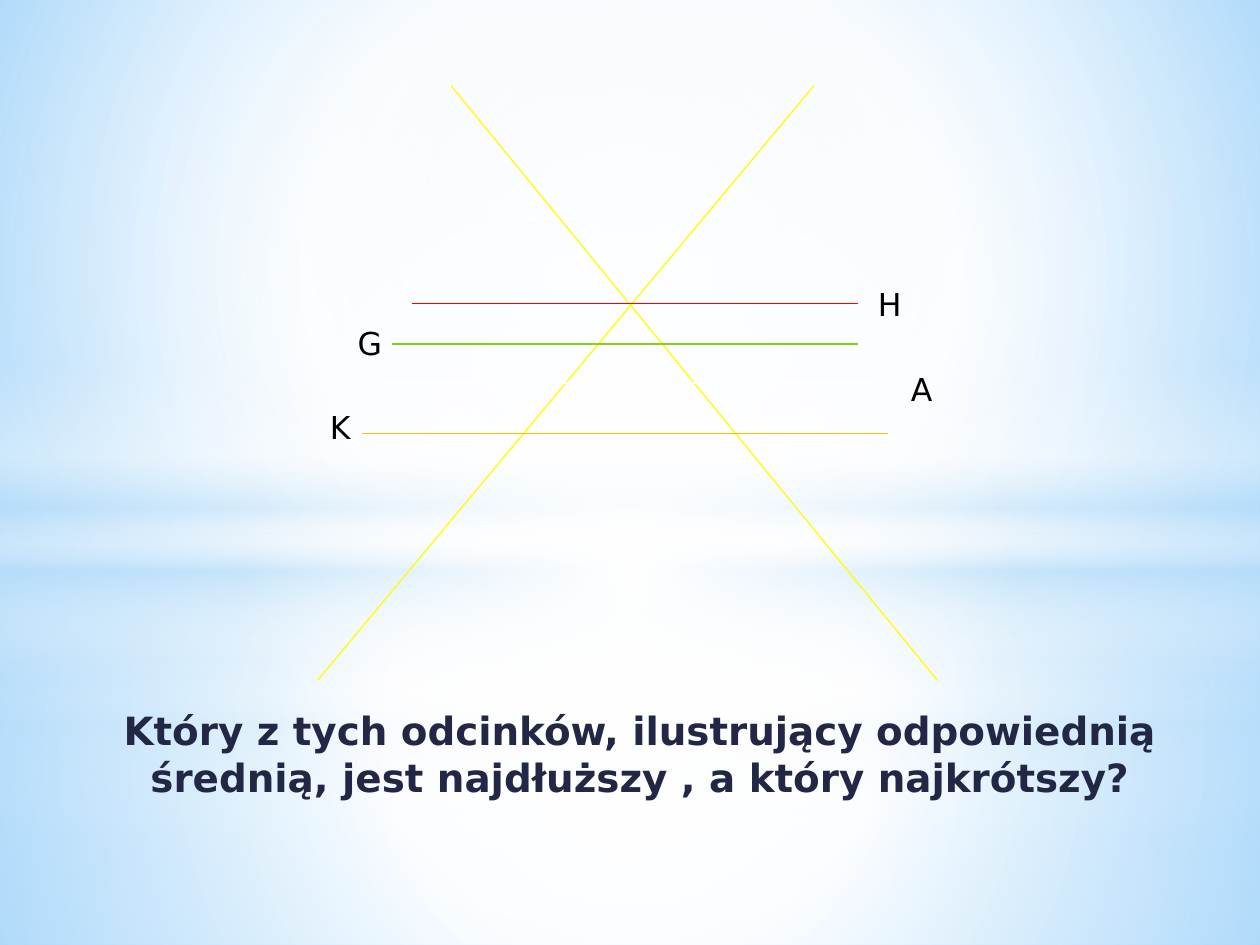
"""Build the slide that asks which segment is the longest and which the shortest."""
from pptx import Presentation, oxml, util as u
from pptx.dml.color import RGBColor
from pptx.enum import shapes, text
from pptx.oxml.ns import nsdecls, qn

FONT = "DejaVu Sans"
QUESTION = "Który z tych odcinków, ilustrujący odpowiednią średnią, jest najdłuższy , a który najkrótszy?"
CENTRE = (50, 50, 50, 50)
BACKDROP = [(0, "9ED5FF", 100), (60, "FFFFFF", 100), (100, "5BB9FF", 100)]
BAND = [(0, "FFFFFF", 0), (29, "FFFFFF", 30), (45, "B4DCFA", 40),
        (55, "FFFFFF", 26), (65, "B4DCFA", 60), (100, "FFFFFF", 0)]


def wash(middle, *alphas):
    return list(zip((0, middle, 100), ("FFFFFF", "FFFFFF", "B4DCFA"), alphas))


def glow(edge):
    return [(0, "FFFFFF", 100), (edge, "FFFFFF", 0)]


LAYERS = [
    ("RECTANGLE", 5.58, 1.92, wash(37, 91, 76, 79), CENTRE),
    ("RECTANGLE", 0, 5.58, wash(48, 89, 62, 79), CENTRE),
    ("RECTANGLE", 4.12, 2.5, BAND, None),
    ("OVAL", 1.75, 5.58, glow(56), CENTRE),
    ("RECTANGLE", 4.23, 3.27, wash(37, 92, 77, 80), CENTRE),
    ("RECTANGLE", 0, 4.23, wash(48, 90, 63, 80), CENTRE),
    ("RECTANGLE", 2.9, 2.5, BAND, None),
    ("OVAL", 1.75, 5.58, glow(54), CENTRE),
]
LINES = [
    (3.58, 0.68, 7.44, 5.4, "FFFF00"),
    (6.46, 0.68, 2.52, 5.4, "FFFF00"),
    (2.87, 3.44, 7.05, 3.44, "FFC000"),
    (3.27, 2.41, 6.81, 2.41, "FF0000"),
    (3.11, 2.73, 6.81, 2.73, "81D31A"),
    (3.05, 3.04, 6.95, 3.04, "FFFFFF"),
]
LABELS = [("H", 6.87, 2.21, 0.37), ("G", 2.74, 2.52, 0.37),
          ("A", 7.13, 2.89, 0.35), ("K", 2.52, 3.19, 0.35)]


def rgb(value):
    return RGBColor.from_string(value)


def set_gradient(fill, parent, stops, focus):
    fill.solid()
    gs = "".join(f'<a:gs pos="{pos * 1000}"><a:srgbClr val="{color}"><a:alpha val="{alpha * 1000}"/>'
                 "</a:srgbClr></a:gs>" for pos, color, alpha in stops)
    if focus:
        sides = " ".join(f'{side}="{v * 1000}"' for side, v in zip("ltrb", focus))
        shade = f'<a:path path="circle"><a:fillToRect {sides}/></a:path>'
    else:
        shade = '<a:lin ang="5400000" scaled="0"/>'
    grad = oxml.parse_xml(f'<a:gradFill {nsdecls("a")} rotWithShape="1"><a:gsLst>{gs}</a:gsLst>{shade}</a:gradFill>')
    parent.replace(parent.find(qn("a:solidFill")), grad)


def style(p, size, color, bold=False):
    font = p.runs[0].font
    font.name, font.size, font.bold = FONT, u.Pt(size), bold
    font.color.rgb = rgb(color)


def add_layer(s, kind, top, height, stops, focus):
    sp = s.shapes.add_shape(shapes.MSO_SHAPE[kind], 0, u.Inches(top), u.Inches(10), u.Inches(height))
    sp.shadow.inherit = False
    sp.line.fill.background()
    set_gradient(sp.fill, sp._element.spPr, stops, focus)


def add_question(s):
    body = s.placeholders[1]
    s.shapes._spTree.append(body._element)
    body.left, body.top, body.width, body.height = map(u.Inches, (0.59, 5.56, 8.98, 1.18))
    tf = body.text_frame
    tf.text = QUESTION
    tf.vertical_anchor = text.MSO_ANCHOR.TOP
    p = tf.paragraphs[0]
    p.alignment = text.PP_ALIGN.CENTER
    p.space_before, p.space_after = u.Pt(4.4), u.Pt(3)
    pPr = p._p.get_or_add_pPr()
    pPr.set("marL", "0")
    pPr.set("indent", "0")
    pPr.append(oxml.parse_xml(f'<a:buNone {nsdecls("a")}/>'))
    style(p, 22.2, "212745", True)


def add_line(s, x1, y1, x2, y2, color):
    line = s.shapes.add_connector(shapes.MSO_CONNECTOR.STRAIGHT, *map(u.Inches, (x1, y1, x2, y2)))
    line.line.color.rgb = rgb(color)
    line.line.width = u.Pt(0.75)
    line._element.spPr.append(oxml.parse_xml(f'<a:effectLst {nsdecls("a")}/>'))


def add_label(s, letter, left, top, width):
    tf = s.shapes.add_textbox(*map(u.Inches, (left, top, width, 0.4))).text_frame
    tf.word_wrap = False
    tf.auto_size = text.MSO_AUTO_SIZE.SHAPE_TO_FIT_TEXT
    tf.text = letter
    style(tf.paragraphs[0], 18, "000000")


def main():
    prs = Presentation()
    prs.slide_width, prs.slide_height = u.Inches(10), u.Inches(7.5)
    s = prs.slides.add_slide(prs.slide_layouts[1])
    title = s.shapes.title._element
    title.getparent().remove(title)
    fill = s.background.fill
    fill.solid()
    set_gradient(fill, s._element.find(".//" + qn("p:bgPr")), BACKDROP, (20, 10, 20, 60))
    for layer in LAYERS:
        add_layer(s, *layer)
    add_question(s)
    for line in LINES:
        add_line(s, *line)
    for label in LABELS:
        add_label(s, *label)
    prs.save("out.pptx")


if __name__ == "__main__":
    main()
